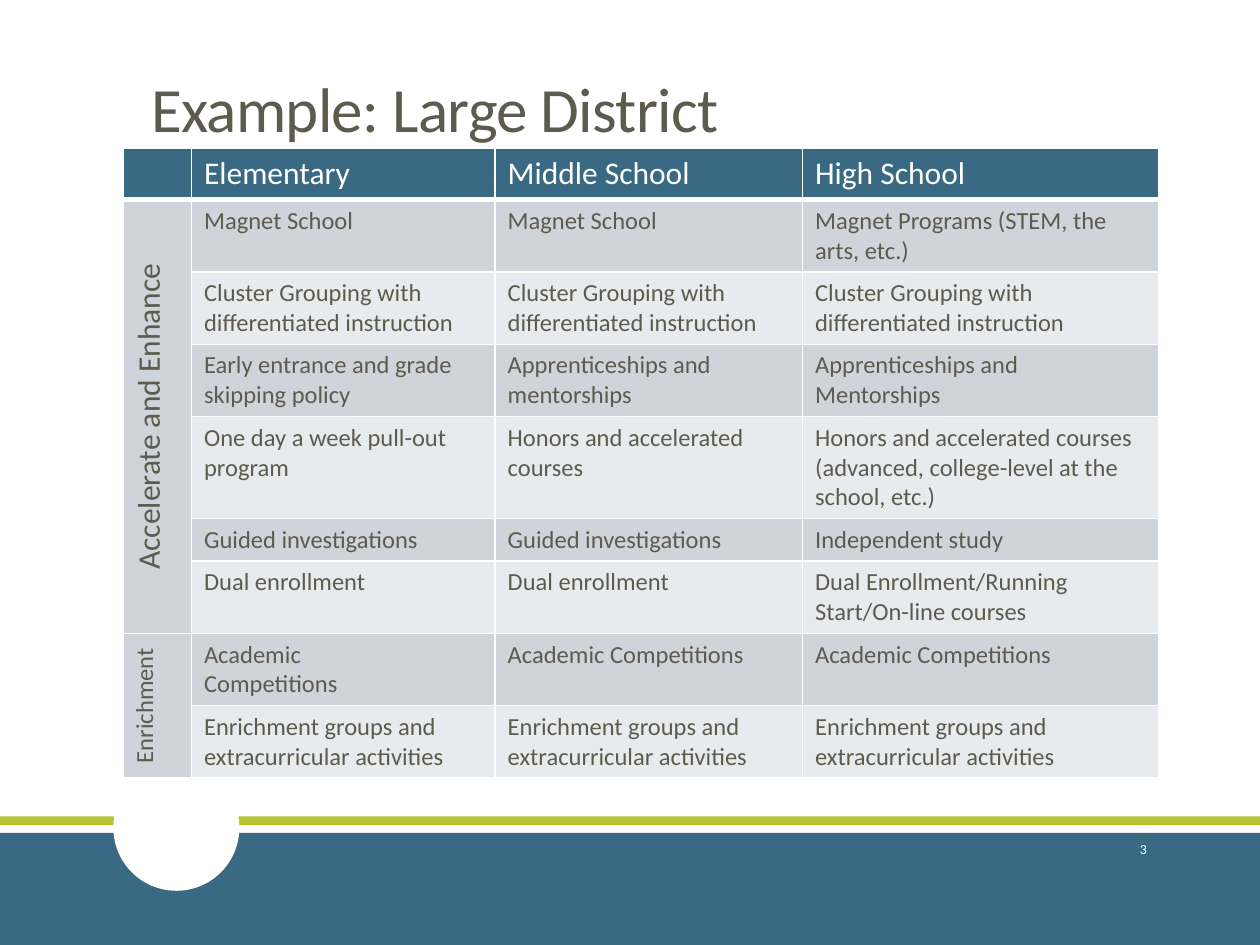
from pptx import Presentation
from pptx.dml.color import RGBColor
from pptx.enum.shapes import MSO_SHAPE as Shape
from pptx.enum.text import MSO_ANCHOR as Anchor, PP_ALIGN as Align
from pptx.oxml.ns import qn
from pptx.util import Inches, Pt
from lxml.etree import SubElement

TITLE = "Example: Large District"
PAGE_NUMBER = "3"
HEADERS = ["", "Elementary", "Middle School", "High School"]
CLUSTER = "Cluster Grouping with differentiated instruction"
COMPETITIONS = "Academic Competitions"
GROUPS = "Enrichment groups and extracurricular activities"
SECTIONS = [
    ("Accelerate and Enhance", 18, [
        ("Magnet School", "Magnet School", "Magnet Programs (STEM, the arts, etc.)"),
        (CLUSTER, CLUSTER, CLUSTER),
        ("Early entrance and grade skipping policy",
         "Apprenticeships and mentorships", "Apprenticeships and Mentorships"),
        ("One day a week pull-out program", "Honors and accelerated courses",
         "Honors and accelerated courses (advanced, college-level at the school, etc.)"),
        ("Guided investigations", "Guided investigations", "Independent study"),
        ("Dual enrollment", "Dual enrollment",
         "Dual Enrollment/Running Start/On-line courses"),
    ]),
    ("Enrichment", 14, [
        ("Academic\nCompetitions", COMPETITIONS, COMPETITIONS),
        (GROUPS, GROUPS, GROUPS),
    ]),
]
COLUMN_WIDTHS = [0.54, 2.41, 2.44, 2.83]
ROW_HEIGHTS = [0.32, 0.56, 0.57, 0.56, 0.8, 0.33, 0.56, 0.56, 0.57]

THEME = {
    "font": "Calibri", "text": "5D5B4E", "white": "FFFFFF",
    "blue": "3A6983", "green": "B7C333", "bands": ["CED4D9", "E8EBED"],
    "title": 36, "header": 18, "body": 14, "number": 7.9,
}


def style(para, size, color, align=None):
    para.font.name = THEME["font"]
    para.font.size = Pt(size)
    para.font.bold = False
    para.font.color.rgb = RGBColor.from_string(color)
    if align is not None:
        para.alignment = align


def add_block(page, kind, box, color):
    block = page.shapes.add_shape(kind, *map(Inches, box))
    block.shadow.inherit = False
    block.fill.solid()
    block.fill.fore_color.rgb = RGBColor.from_string(color)
    block.line.fill.background()


def add_borders(cell, bottom=1):
    """Draw white borders; call before the fill, which must follow them in the XML."""
    props = cell._tc.get_or_add_tcPr()
    for side, width in (("L", 1), ("R", 1), ("T", 1), ("B", bottom)):
        line = SubElement(props, qn(f"a:ln{side}"), w=str(Pt(width)))
        fill = SubElement(line, qn("a:solidFill"))
        SubElement(fill, qn("a:srgbClr"), val=THEME["white"])


def fill_cell(cell, text, size, color, fill, bottom=1, align=None):
    add_borders(cell, bottom)
    cell.fill.solid()
    cell.fill.fore_color.rgb = RGBColor.from_string(fill)
    cell.text = text
    for para in cell.text_frame.paragraphs:
        style(para, size, color, align)


def add_programs(page):
    frame = page.shapes.add_table(
        len(ROW_HEIGHTS), len(COLUMN_WIDTHS), Inches(0.98), Inches(1.18),
        Inches(sum(COLUMN_WIDTHS)), Inches(sum(ROW_HEIGHTS)))
    table = frame.table
    for column, width in zip(table.columns, COLUMN_WIDTHS):
        column.width = Inches(width)
    for row, height in zip(table.rows, ROW_HEIGHTS):
        row.height = Inches(height)

    for col, text in enumerate(HEADERS):
        fill_cell(table.cell(0, col), text, THEME["header"], THEME["white"],
                  THEME["blue"], bottom=3)
    top = 1
    for name, size, rows in SECTIONS:
        for row, texts in enumerate(rows, top):
            band = THEME["bands"][(row - 1) % 2]
            label = name if row == top else ""
            fill_cell(table.cell(row, 0), label, size, THEME["text"],
                      THEME["bands"][0], align=Align.CENTER)
            for col, text in enumerate(texts, 1):
                fill_cell(table.cell(row, col), text, THEME["body"], THEME["text"], band)
        head = table.cell(top, 0)
        head.merge(table.cell(top + len(rows) - 1, 0))
        head._tc.get_or_add_tcPr().set("vert", "vert270")
        top += len(rows)


def add_title(page):
    title = page.shapes.title
    title.left, title.top, title.width, title.height = map(Inches, (1.1, 0.4, 9.03, 0.8))
    title.text_frame.text = TITLE
    title.text_frame.vertical_anchor = Anchor.BOTTOM
    para = title.text_frame.paragraphs[0]
    para.line_spacing = 0.85
    style(para, THEME["title"], THEME["text"], Align.LEFT)
    para._p.pPr.find(qn("a:defRPr")).set("spc", "-40")


def add_page_number(page):
    box = page.shapes.add_textbox(*map(Inches, (8.12, 6.54, 1.08, 0.4)))
    box.text_frame.word_wrap = True
    box.text_frame.vertical_anchor = Anchor.MIDDLE
    box.text_frame.text = PAGE_NUMBER
    style(box.text_frame.paragraphs[0], THEME["number"], THEME["white"], Align.RIGHT)


def main():
    deck = Presentation()
    deck.slide_width, deck.slide_height = Inches(10), Inches(7.5)
    page = deck.slides.add_slide(deck.slide_layouts[5])
    add_block(page, Shape.RECTANGLE, (0, 6.48, 10, 0.07), THEME["green"])
    add_block(page, Shape.RECTANGLE, (0, 6.61, 10, 0.89), THEME["blue"])
    add_block(page, Shape.OVAL, (0.9, 6.07, 1, 1), THEME["white"])
    add_title(page)
    add_programs(page)
    add_page_number(page)
    deck.save("out.pptx")


if __name__ == "__main__":
    main()
